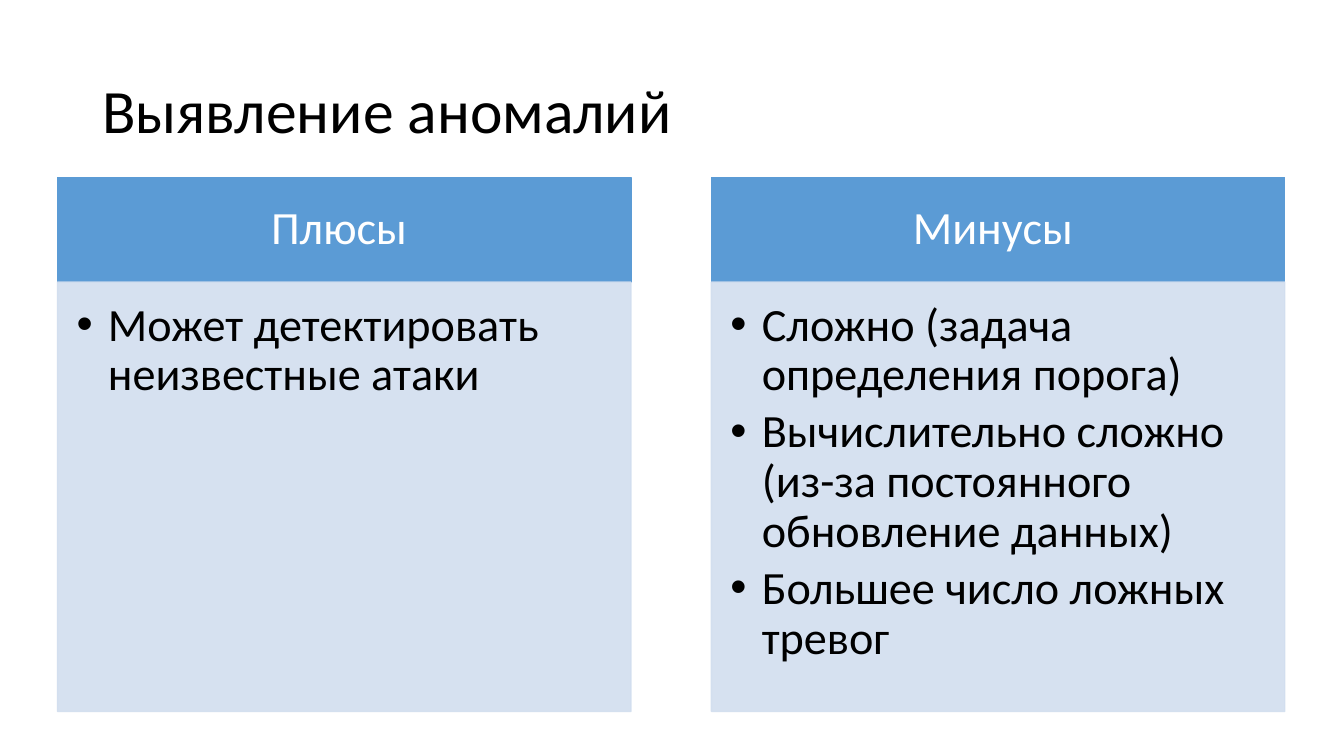
from dataclasses import dataclass

from lxml.etree import SubElement
from pptx import Presentation
from pptx.dml.color import RGBColor
from pptx.enum.shapes import MSO_SHAPE as Shape
from pptx.enum.text import MSO_ANCHOR as Anchor, PP_ALIGN as Align
from pptx.oxml.ns import qn
from pptx.util import Cm, Pt


@dataclass(frozen=True)
class Theme:
    font: str = "Calibri"
    title_size: int = 44
    body_size: int = 33
    text: str = "000000"
    header_text: str = "FFFFFF"
    header_fill: str = "5B9BD5"
    body_fill: str = "D2DEEF"
    body_opacity: int = 90
    line_spacing: float = 0.9
    bullet_indent: float = 0.79


class SlideBuilder:
    """Draws styled elements on one slide; all lengths are in centimetres."""

    def __init__(self, slide, theme):
        self.slide = slide
        self.theme = theme

    def set_text(self, shape, lines, size, color, align, anchor, insets=(0.25, 0.13, 0.25, 0.13)):
        """Fill a shape with one paragraph per line; insets run left, top, right, bottom."""
        frame = shape.text_frame
        frame.text = "\n".join(lines)
        frame.word_wrap = True
        frame.vertical_anchor = anchor
        (frame.margin_left, frame.margin_top,
         frame.margin_right, frame.margin_bottom) = map(Cm, insets)
        for paragraph in frame.paragraphs:
            paragraph.alignment = align
            paragraph.line_spacing = self.theme.line_spacing
            for run in paragraph.runs:
                run.font.name = self.theme.font
                run.font.size = Pt(size)
                run.font.color.rgb = RGBColor.from_string(color)

    def title(self, text, left, top, width, height):
        box = self.slide.shapes.add_textbox(Cm(left), Cm(top), Cm(width), Cm(height))
        self.set_text(box, [text], self.theme.title_size, self.theme.text,
                      Align.LEFT, Anchor.MIDDLE)

    def panel(self, left, top, width, height, color, opacity=100):
        panel = self.slide.shapes.add_shape(
            Shape.RECTANGLE, Cm(left), Cm(top), Cm(width), Cm(height))
        panel.shadow.inherit = False
        panel.fill.solid()
        panel.line.width = Pt(1)
        for target in (panel.fill.fore_color, panel.line.color):
            target.rgb = RGBColor.from_string(color)
        if opacity < 100:
            for color_node in panel.element.spPr.iter(qn("a:srgbClr")):
                SubElement(color_node, qn("a:alpha"), val=str(opacity * 1000))
        return panel

    def header(self, text, *bounds):
        theme = self.theme
        panel = self.panel(*bounds, theme.header_fill)
        self.set_text(panel, [text], theme.body_size, theme.header_text,
                      Align.CENTER, Anchor.MIDDLE, (0.66, 0.38, 0.66, 0.38))

    def bullet_list(self, items, *bounds):
        theme = self.theme
        panel = self.panel(*bounds, theme.body_fill, theme.body_opacity)
        self.set_text(panel, items, theme.body_size, theme.text,
                      Align.LEFT, Anchor.TOP, (0.48, 0.48, 0.66, 0.73))
        for paragraph in panel.text_frame.paragraphs:
            paragraph.space_after = Pt(5)
            properties = paragraph._p.get_or_add_pPr()
            indent = Cm(theme.bullet_indent)
            properties.set("marL", str(indent))
            properties.set("indent", str(-indent))
            SubElement(properties, qn("a:buFont"), typeface="Arial")
            SubElement(properties, qn("a:buChar"), char="•")


COLUMNS = {
    "Плюсы ": ["Может детектировать неизвестные атаки "],
    "Минусы ": [
        "Сложно (задача определения порога) ",
        "Вычислительно сложно (из-за постоянного обновление данных) ",
        "Большее число ложных тревог ",
    ],
}
COLUMN_LEFT, COLUMN_STEP, COLUMN_WIDTH = 1.45, 16.48, 14.45
HEADER_TOP, HEADER_HEIGHT, LIST_HEIGHT = 4.47, 2.64, 10.82


def main():
    presentation = Presentation()
    presentation.slide_width, presentation.slide_height = Cm(33.87), Cm(19.05)
    slide = presentation.slides.add_slide(presentation.slide_layouts[6])
    builder = SlideBuilder(slide, Theme())
    builder.title("Выявление аномалий", 2.33, 1.01, 29.21, 3.68)
    for index, (heading, items) in enumerate(COLUMNS.items()):
        left = COLUMN_LEFT + index * COLUMN_STEP
        builder.header(heading, left, HEADER_TOP, COLUMN_WIDTH, HEADER_HEIGHT)
        builder.bullet_list(items, left, HEADER_TOP + HEADER_HEIGHT, COLUMN_WIDTH, LIST_HEIGHT)
    presentation.save("out.pptx")


if __name__ == "__main__":
    main()
